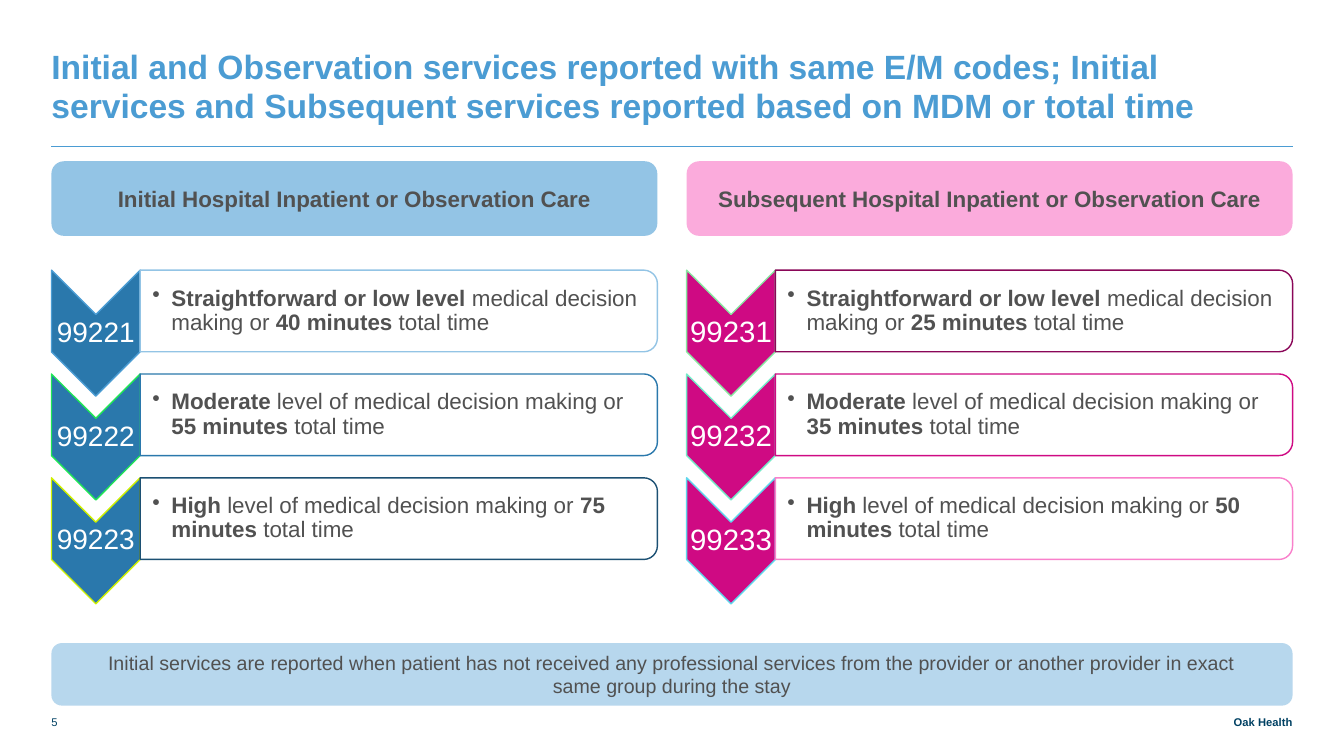
from lxml import etree
from pptx import Presentation
from pptx import util as u
from pptx.dml.color import RGBColor
from pptx.enum import shapes, text
from pptx.oxml.ns import qn

BLUE = RGBColor(0x4B, 0x9C, 0xD3)
NAVY = RGBColor(0x00, 0x41, 0x63)
GRAY = RGBColor(0x51, 0x51, 0x51)
WHITE = RGBColor(0xFF, 0xFF, 0xFF)
PALE_BLUE = RGBColor(0xB7, 0xD7, 0xED)
SKY = RGBColor(0x93, 0xC4, 0xE5)
STEEL = RGBColor(0x2A, 0x78, 0xAC)
DEEP_STEEL = RGBColor(0x1C, 0x50, 0x73)
GREEN = RGBColor(0x20, 0xE7, 0x56)
LIME = RGBColor(0xCF, 0xF0, 0x00)
ROSE = RGBColor(0xFB, 0xAB, 0xDC)
MAGENTA = RGBColor(0xCF, 0x0A, 0x83)
PLUM = RGBColor(0x8A, 0x07, 0x58)
PINK = RGBColor(0xF9, 0x80, 0xCB)
MINT = RGBColor(0x89, 0xE8, 0xA2)
AQUA = RGBColor(0x75, 0xEA, 0xC8)
CYAN = RGBColor(0x5F, 0xD7, 0xED)

TITLE = ("Initial and Observation services reported with same E/M codes; "
         "Initial services and Subsequent services reported based on MDM or total time")
LEVELS = [("Straightforward or low level", " medical decision making or "),
          ("Moderate", " level of medical decision making or "),
          ("High", " level of medical decision making or ")]
COLUMNS = [
    {"heading": "Initial Hospital Inpatient or Observation Care",
     "band": SKY, "fill": STEEL, "code_size": 20,
     "rows": [("99221", "40 minutes", BLUE, SKY),
              ("99222", "55 minutes", GREEN, STEEL),
              ("99223", "75 minutes", LIME, DEEP_STEEL)]},
    {"heading": "Subsequent Hospital Inpatient or Observation Care",
     "band": ROSE, "fill": MAGENTA, "code_size": 21,
     "rows": [("99231", "25 minutes", MINT, PLUM),
              ("99232", "35 minutes", AQUA, MAGENTA),
              ("99233", "50 minutes", CYAN, PINK)]},
]
NOTE = ["Initial services are reported when patient has not received any "
        "professional services from the provider or another provider in exact",
        "same group during the stay"]
PAGE_NUMBER = "5"
OWNER = "Oak Health"

LEFT, WIDTH = 0.51, 12.31
COLUMN_WIDTH, COLUMN_PITCH = 6.01, 6.3
ROW_TOP, ROW_PITCH, ROW_HEIGHT = 2.68, 1.03, 0.81
CHEVRON_WIDTH, CHEVRON_HEIGHT = 0.88, 1.25

LEFT_ALIGN, CENTER, RIGHT = text.PP_ALIGN.LEFT, text.PP_ALIGN.CENTER, text.PP_ALIGN.RIGHT
MIDDLE, BOTTOM = text.MSO_ANCHOR.MIDDLE, text.MSO_ANCHOR.BOTTOM

deck = Presentation()
deck.slide_width, deck.slide_height = u.Inches(13.33), u.Inches(7.5)
page = deck.slides.add_slide(deck.slide_layouts[5])


def write(box, paragraphs, size, color, align=CENTER, anchor=MIDDLE,
          insets=(0, 0, 0, 0), spacing=None, bullet=False, wrap=True):
    frame = box.text_frame
    frame.word_wrap = wrap
    frame.auto_size = text.MSO_AUTO_SIZE.NONE
    frame.vertical_anchor = anchor
    (frame.margin_left, frame.margin_top,
     frame.margin_right, frame.margin_bottom) = map(u.Inches, insets)
    for index, runs in enumerate(paragraphs):
        para = frame.add_paragraph() if index else frame.paragraphs[0]
        para.alignment = align
        if spacing:
            para.line_spacing = spacing
        if bullet:
            properties = para._p.get_or_add_pPr()
            properties.set("marL", str(u.Inches(0.19)))
            properties.set("indent", str(-u.Inches(0.19)))
            etree.SubElement(properties, qn("a:buChar")).set("char", "•")
        for words, bold in runs:
            span = para.add_run()
            span.text = words
            span.font.name = "Arial"
            span.font.size = u.Pt(size)
            span.font.bold = bold
            span.font.color.rgb = color


def add_text(left, top, width, height, *args, **options):
    box = page.shapes.add_textbox(*map(u.Inches, (left, top, width, height)))
    write(box, *args, **options)


def add_shape(kind, left, top, width, height, fill, line=None):
    shape = page.shapes.add_shape(kind, *map(u.Inches, (left, top, width, height)))
    shape.shadow.inherit = False
    shape.fill.solid()
    shape.fill.fore_color.rgb = fill
    if line is None:
        shape.line.fill.background()
    else:
        shape.line.color.rgb = line
        shape.line.width = u.Pt(1)
    return shape


def add_turned(kind, left, top, width, height, fill, line):
    shift = (width - height) / 2
    shape = add_shape(kind, left + shift, top - shift, height, width, fill, line)
    shape.rotation = 90


def add_row(left, top, column, level, row):
    code, minutes, chevron_line, panel_line = row
    add_turned(shapes.MSO_SHAPE.CHEVRON, left, top, CHEVRON_WIDTH, CHEVRON_HEIGHT,
               column["fill"], chevron_line)
    add_text(left, top + CHEVRON_HEIGHT / 2 - 0.19, CHEVRON_WIDTH, 0.38,
             [[(code, False)]], column["code_size"], WHITE,
             insets=(0.01,) * 4, spacing=0.9)
    panel_left = left + CHEVRON_WIDTH
    panel_width = COLUMN_WIDTH - CHEVRON_WIDTH
    add_turned(shapes.MSO_SHAPE.ROUND_2_SAME_RECTANGLE, panel_left, top,
               panel_width, ROW_HEIGHT, WHITE, panel_line)
    name, detail = level
    add_text(panel_left, top + 0.04, panel_width - 0.04, ROW_HEIGHT - 0.08,
             [[(name, True), (detail, False), (minutes, True), (" total time", False)]],
             16, GRAY, align=LEFT_ALIGN, insets=(0.12, 0.01, 0.01, 0.01),
             spacing=0.9, bullet=True)


title = page.shapes.title
title.left, title.top, title.width, title.height = map(u.Inches, (LEFT, 0.38, WIDTH, 0.86))
write(title, [[(TITLE, True)]], 24, BLUE, align=LEFT_ALIGN, anchor=BOTTOM,
      insets=(0, 0, 0.95, 0), spacing=u.Pt(28))

rule = page.shapes.add_connector(shapes.MSO_CONNECTOR.STRAIGHT, *map(
    u.Inches, (LEFT, 1.45, LEFT + WIDTH, 1.45)))
rule.line.color.rgb = BLUE
rule.line.width = u.Pt(0.5)
etree.SubElement(rule._element.spPr, qn("a:effectLst"))

for number, column in enumerate(COLUMNS):
    left = LEFT + number * COLUMN_PITCH
    heading = add_shape(shapes.MSO_SHAPE.ROUNDED_RECTANGLE, left, 1.6,
                        COLUMN_WIDTH, 0.74, column["band"])
    write(heading, [[(column["heading"], True)]], 16, GRAY, wrap=False)
    for index, (level, row) in enumerate(zip(LEVELS, column["rows"])):
        add_row(left, ROW_TOP + index * ROW_PITCH, column, level, row)

note = add_shape(shapes.MSO_SHAPE.ROUNDED_RECTANGLE, LEFT, 6.38, WIDTH, 0.62, PALE_BLUE)
write(note, [[(line, False)] for line in NOTE], 14, GRAY, wrap=False)

add_text(LEFT, 7, 0.46, 0.23, [[(PAGE_NUMBER, False)]], 8, NAVY,
         align=LEFT_ALIGN, anchor=BOTTOM)
add_text(LEFT + WIDTH - 1.64, 7, 1.64, 0.23, [[(OWNER, True)]], 8, NAVY,
         align=RIGHT, anchor=BOTTOM)

deck.save("out.pptx")
